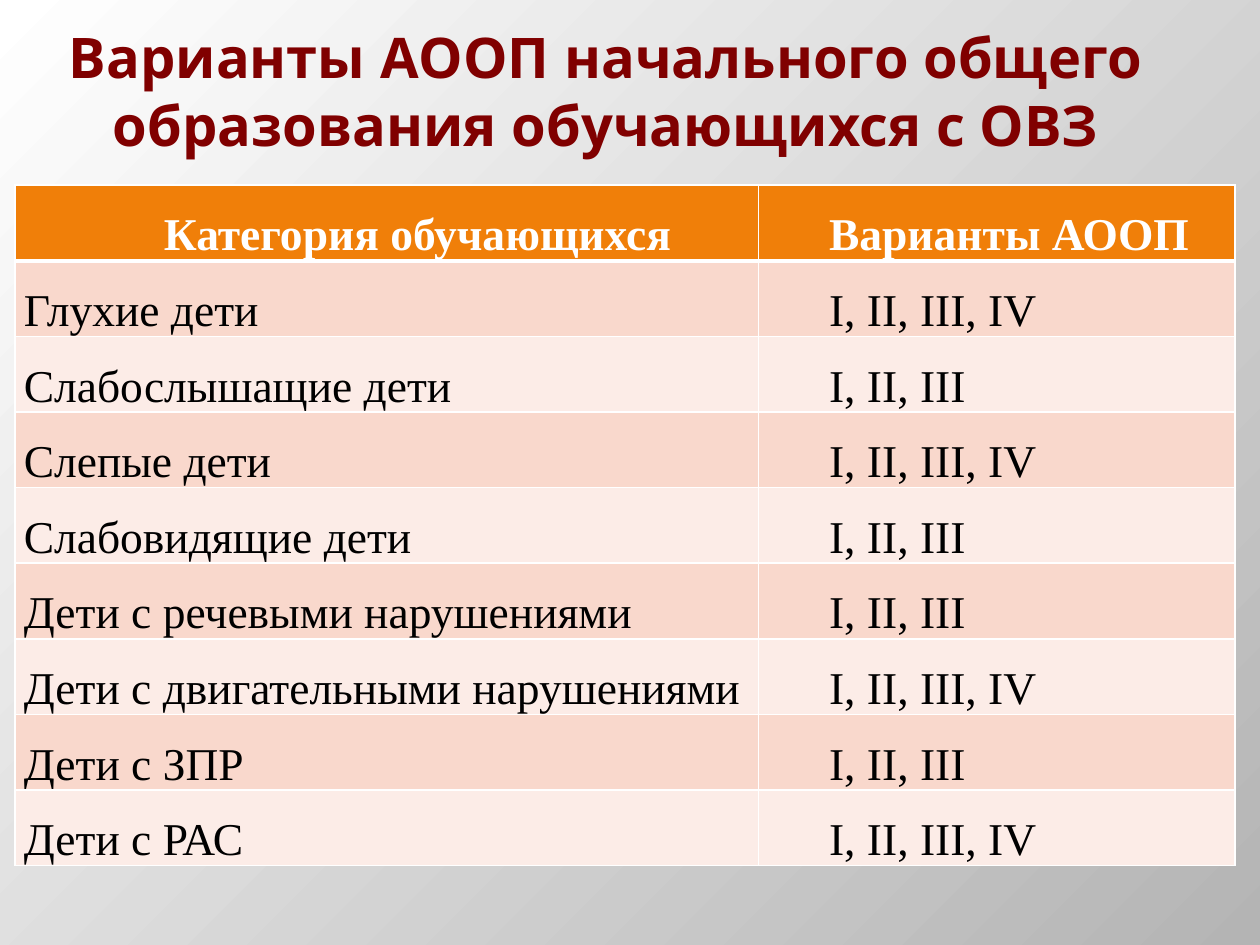
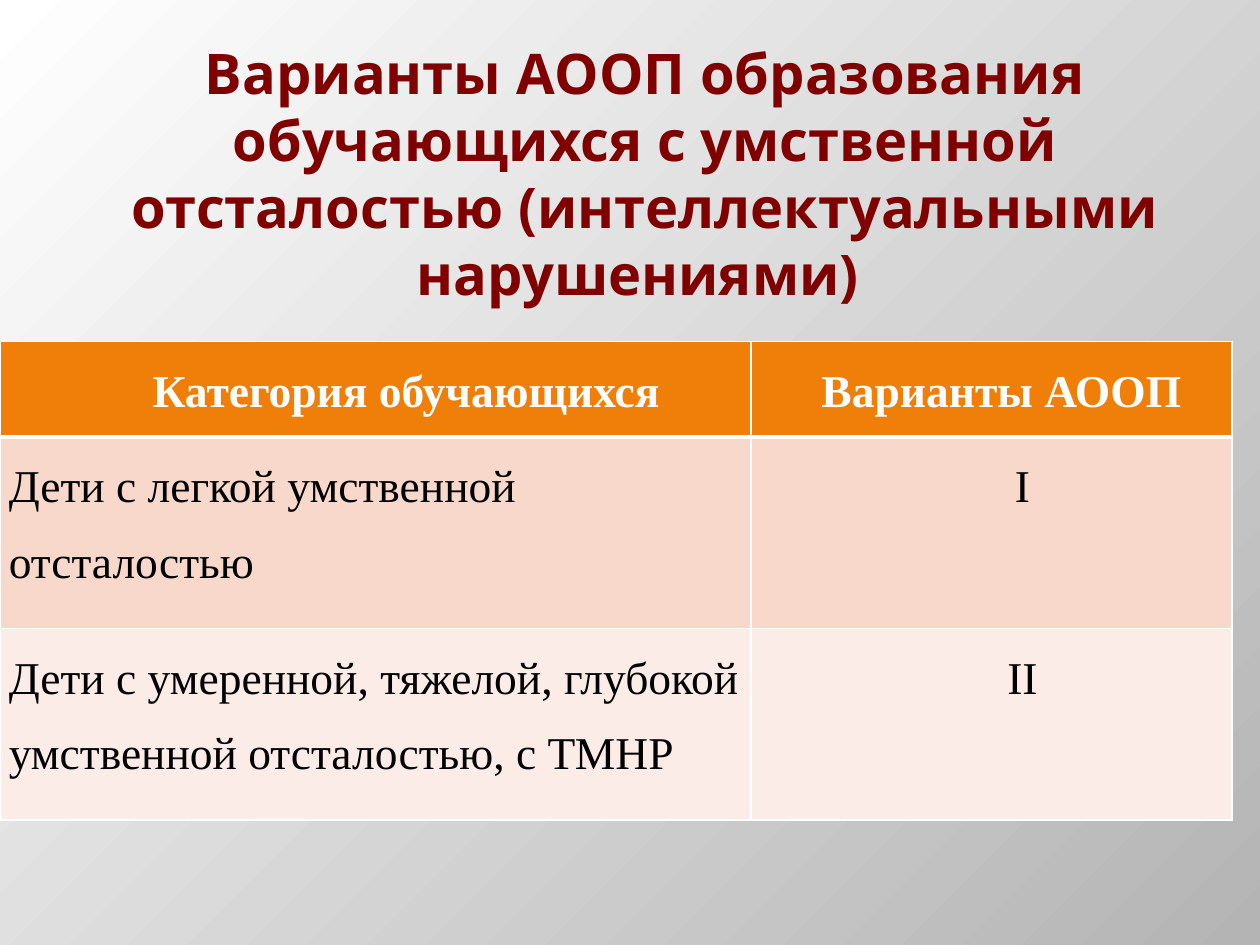
from lxml import etree
from pptx import Presentation
from pptx import util as u
from pptx.dml.color import RGBColor
from pptx.enum import text
from pptx.oxml import ns

HEADINGS = ("Категория обучающихся", "Варианты АООП")
SLIDES = [
    {
        "title": "Варианты АООП начального общего образования обучающихся с ОВЗ",
        "title_box": (0.28, 0.21, 9.06, 1.01),
        "table_box": (0.12, 1.47, 9.68, 5.85),
        "columns": (5.9, 3.78),
        "row_heights": [0.6] * 9,
        "bottom_margin": -0.05,
        "variants_centred": False,
        "categories": [
            ("Глухие дети", "I, II, III, IV"),
            ("Слабослышащие дети", "I, II, III"),
            ("Слепые дети", "I, II, III, IV"),
            ("Слабовидящие дети", "I, II, III"),
            ("Дети с речевыми нарушениями", "I, II, III"),
            ("Дети с двигательными нарушениями", "I, II, III, IV"),
            ("Дети с ЗПР", "I, II, III"),
            ("Дети с РАС", "I, II, III, IV"),
        ],
    },
    {
        "title": "Варианты АООП образования обучающихся с умственной отсталостью "
                 "(интеллектуальными нарушениями) ",
        "title_box": (0.59, 0.52, 9.06, 1.7),
        "table_box": (0, 2.71, 9.78, 4.23),
        "columns": (5.96, 3.82),
        "row_heights": [0.76, 1.52, 1.52],
        "bottom_margin": 0,
        "variants_centred": True,
        "categories": [
            ("Дети с легкой умственной отсталостью", "I"),
            ("Дети с умеренной, тяжелой, глубокой умственной отсталостью, с ТМНР", "II"),
        ],
    },
]

TITLE_FONT, TABLE_FONT = "Noto Sans", "Times New Roman"
MAROON, ORANGE, WHITE, BLACK, GREY = "800000", "F07F09", "FFFFFF", "000000", "B4B4B4"
BANDS = ("F9D8CC", "FCECE7")


def color(value):
    return RGBColor.from_string(value)


def style(paragraph, font_name, size, value, bold, centred):
    paragraph.alignment = text.PP_ALIGN.CENTER if centred else text.PP_ALIGN.LEFT
    for run in paragraph.runs:
        run.font.name = font_name
        run.font.size = u.Pt(size)
        run.font.bold = bold
        run.font.color.rgb = color(value)


def paint_background(master):
    fill = master.background.fill
    fill.gradient()
    for stop, value in zip(fill.gradient_stops, (WHITE, GREY)):
        stop.color.rgb = color(value)
    gradient = master.element.find(".//" + ns.qn("p:bgPr")).find(ns.qn("a:gradFill"))
    gradient.remove(gradient.find(ns.qn("a:lin")))
    circle = etree.SubElement(gradient, ns.qn("a:path"), path="circle")
    etree.SubElement(circle, ns.qn("a:fillToRect"), r="100000", b="100000")


def add_title(slide, wording, box):
    frame = slide.shapes.add_textbox(*map(u.Inches, box)).text_frame
    frame.word_wrap = True
    frame.vertical_anchor = text.MSO_ANCHOR.MIDDLE
    frame.text = wording
    style(frame.paragraphs[0], TITLE_FONT, 32, MAROON, True, True)


def add_borders(cell, top, bottom):
    properties = cell._tc.get_or_add_tcPr()
    for side, width in (("L", 1), ("R", 1), ("T", top), ("B", bottom)):
        line = etree.SubElement(properties, ns.qn("a:ln" + side), w=str(u.Pt(width)))
        solid = etree.SubElement(line, ns.qn("a:solidFill"))
        etree.SubElement(solid, ns.qn("a:srgbClr"), val=WHITE)


def fill_cell(cell, wording, row, column, content):
    header = row == 0
    add_borders(cell, 3 if row == 1 else 1, 3 if header else 1)
    cell.fill.solid()
    cell.fill.fore_color.rgb = color(ORANGE if header else BANDS[(row - 1) % 2])
    cell.margin_left = cell.margin_right = u.Inches(0.07)
    cell.margin_top = 0
    cell.margin_bottom = u.Inches(content["bottom_margin"])
    cell.text_frame.text = wording
    paragraph = cell.text_frame.paragraphs[0]
    paragraph.line_spacing = 1.5
    centred = column == 0 if header else column == 1 and content["variants_centred"]
    style(paragraph, TABLE_FONT, 26, WHITE if header else BLACK, header, centred)
    if header or column == 1:
        indent = paragraph._p.get_or_add_pPr()
        indent.set("marL", "0")
        indent.set("indent", str(u.Inches(0.49)))


def add_variants_table(slide, content):
    rows = [HEADINGS] + content["categories"]
    widths, box = content["columns"], content["table_box"]
    frame = slide.shapes.add_table(len(rows), len(widths), *map(u.Inches, box))
    table = frame.table
    for column, width in zip(table.columns, widths):
        column.width = u.Inches(width)
    for row, height in zip(table.rows, content["row_heights"]):
        row.height = u.Inches(height)
    frame.height = u.Inches(box[3])
    for r, wordings in enumerate(rows):
        for c, wording in enumerate(wordings):
            fill_cell(table.cell(r, c), wording, r, c, content)


def main():
    deck = Presentation()
    deck.slide_width, deck.slide_height = u.Inches(10), u.Inches(7.5)
    paint_background(deck.slide_master)
    for content in SLIDES:
        slide = deck.slides.add_slide(deck.slide_layouts[6])
        add_title(slide, content["title"], content["title_box"])
        add_variants_table(slide, content)
    deck.save("out.pptx")


if __name__ == "__main__":
    main()
